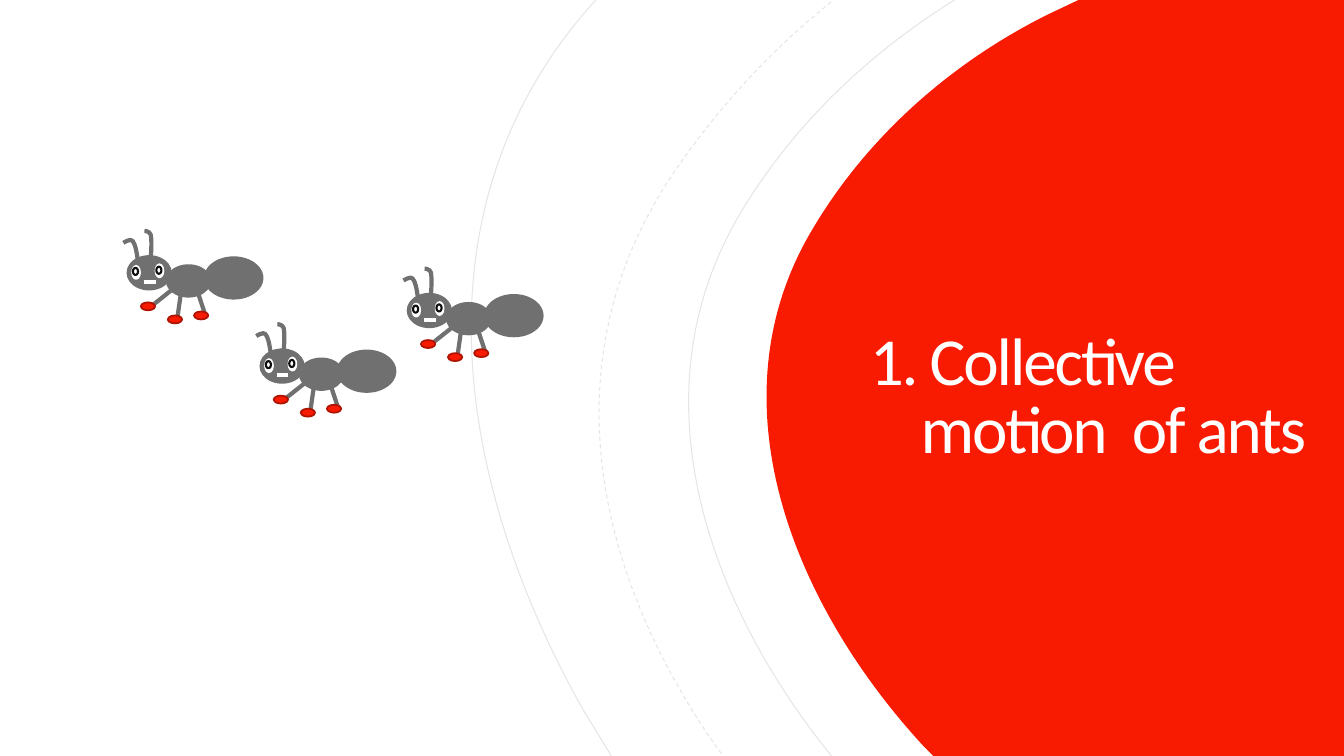
"""Build the section slide on the collective motion of ants."""
import lxml.etree
import pptx
import pptx.dml.color
import pptx.enum.dml
import pptx.enum.shapes
import pptx.enum.text
import pptx.oxml.ns
import pptx.util

Cm = pptx.util.Cm
Pt = pptx.util.Pt
qn = pptx.oxml.ns.qn

COLOURS = {"red": "F81B02", "dark_red": "AF1301", "grey": "707070",
           "black": "000000", "pupil": "0D0D0D", "white": "FFFFFF"}
SLIDE_SIZE = (33.87, 19.05)
TITLE_LINES = ("1. Collective", "motion  of ants")
TITLE_BOX = {"left": Cm(20.9), "top": Cm(3.68), "width": Cm(13.84), "height": Cm(12.75)}
TITLE_FRAME = {
    "word_wrap": True,
    "auto_size": pptx.enum.text.MSO_AUTO_SIZE.NONE,
    "vertical_anchor": pptx.enum.text.MSO_ANCHOR.MIDDLE,
    "margin_left": Cm(0.64), "margin_right": Cm(0.64),
    "margin_top": Cm(0.64), "margin_bottom": Cm(0.64),
}
TITLE_PARAGRAPH = {"alignment": pptx.enum.text.PP_ALIGN.LEFT, "line_spacing": 0.85}
TITLE_FONT = {"name": "Calibri", "size": Pt(48), "bold": False}
TITLE_INDENT = {"marL": Cm(1.66), "indent": Cm(-1.28)}
LETTER_SPACING = "-150"

FAINT = {"line": "black", "width": 0.75, "alpha": 10}
SWEEPS = [
    {"edges": (15.06, -0.05, 33.86, 19.1, 15.44),
     "curve": [(14.71, 17.91), (11.68, 12.55), (10.46, 6.05), (14.2, 0.99),
               (14.45, 0.66), (14.71, 0.33), (14.99, 0.03)],
     "look": FAINT},
    {"edges": (24.1, -0.03, 33.83, 19.08, 20.98),
     "curve": [(20.85, 18.92), (17.7, 14.96), (16.05, 9.83), (18.62, 5.44),
               (19.91, 3.25), (21.77, 1.45), (23.9, 0.1)],
     "look": FAINT},
    {"edges": (21.03, -0.02, 33.88, 19.07, 18.24),
     "curve": [(17.88, 18.57), (14.94, 14.22), (13.82, 8.89), (17.07, 4.22),
               (18.01, 2.87), (19.1, 1.63), (20.37, 0.53)],
     "look": {**FAINT, "dash": True}},
    {"edges": (27.18, 0, 33.87, 19.05, 23.52),
     "curve": [(23.29, 18.82), (19.94, 15.19), (17.93, 10.08), (20.45, 5.82),
               (21.84, 3.45), (23.98, 1.57), (26.42, 0.36)],
     "look": {"fill": "red"}},
]

ANT_ORIGINS = [(3.11, 5.82), (6.46, 8.17), (10.17, 6.77)]
LIMB = {"line": "grey", "width": 3}
BODY = {"fill": "grey"}
FOOT = {"fill": "red", "line": "dark_red", "width": 1.25}
EYE = {"fill": "white", "line": "white", "width": 1.25}
PUPIL = {"fill": "white", "line": "pupil", "width": 1.5}
MOUTH = {"line": "white", "width": 3}
BODY_PARTS = [(1.07, 0.84, 1.14, 0.84), (0.08, 0.61, 1.14, 0.89), (2.03, 0.64, 1.5, 1.09)]
LEGS = [(1.24, 1.47, 0.66, 1.93), (1.45, 1.57, 1.35, 2.26), (1.85, 1.47, 2.08, 2.16)]
ANTENNAE = [
    [(0.36, 0.71), (0.33, 0.51), (0.3, 0.33), (0.23, 0.25), (0.18, 0.18), (0, 0.3), (0, 0.3)],
    [(0.69, 0.64), (0.71, 0.43), (0.71, 0.2), (0.69, 0.1), (0.66, 0), (0.53, 0), (0.53, 0)],
]
FEET = [(0.44, 1.8), (1.12, 2.13), (1.78, 2.03)]
FOOT_SIZE = (0.36, 0.2)
EYES = [((0.81, 0.84), (0.83, 0.9)), ((0.22, 0.88), (0.24, 0.93))]
EYE_SIZE = (0.2, 0.33)
PUPIL_SIZE = (0.13, 0.18)
MOUTH_ENDS = [(0.51, 1.29), (0.81, 1.29)]


def colour(name):
    return pptx.dml.color.RGBColor.from_string(COLOURS[name])


def style_line(line, look):
    if "line" not in look:
        line.fill.background()
        return
    line.color.rgb = colour(look["line"])
    line.width = Pt(look["width"])
    if look.get("dash"):
        line.dash_style = pptx.enum.dml.MSO_LINE.DASH
    if "alpha" in look:
        tint = line._get_or_add_ln().find(".//" + qn("a:srgbClr"))
        lxml.etree.SubElement(tint, qn("a:alpha"), val=str(look["alpha"] * 1000))


def style_shape(shape, look):
    shape.shadow.inherit = False
    if "fill" in look:
        shape.fill.solid()
        shape.fill.fore_color.rgb = colour(look["fill"])
    else:
        shape.fill.background()
    style_line(shape.line, look)


def trace_curve(points, steps=40):
    """Return points along a chain of cubic Bezier curves."""
    traced = [points[0]]
    for first in range(0, len(points) - 1, 3):
        corners = points[first:first + 4]
        for step in range(1, steps + 1):
            t = step / steps
            weights = ((1 - t) ** 3, 3 * t * (1 - t) ** 2, 3 * t * t * (1 - t), t ** 3)
            traced.append(tuple(sum(w * corner[axis] for w, corner in zip(weights, corners))
                                for axis in (0, 1)))
    return traced


def add_outline(shapes, corners, curve, look, closed):
    """Draw straight corners followed by cubic curves, sized to the drawn extent."""
    extent = [(Cm(x), Cm(y)) for x, y in corners + trace_curve(curve)]
    builder = shapes.build_freeform(*extent[0])
    builder.add_line_segments(extent[1:], close=closed)
    shape = builder.convert_to_shape()
    geometry = shape.element.find(".//" + qn("a:path"))
    for child in list(geometry):
        geometry.remove(child)

    straight = corners + curve[:1]
    segments = [("a:moveTo", straight[:1])]
    segments += [("a:lnTo", [point]) for point in straight[1:]]
    segments += [("a:cubicBezTo", curve[first:first + 3]) for first in range(1, len(curve), 3)]
    segments.append(("a:close", []) if closed else ("a:lnTo", curve[-1:]))
    for tag, points in segments:
        segment = lxml.etree.SubElement(geometry, qn(tag))
        for x, y in points:
            lxml.etree.SubElement(segment, qn("a:pt"), x=str(Cm(x) - shape.left),
                                  y=str(Cm(y) - shape.top))
    style_shape(shape, look)


def add_sweep(shapes, sweep):
    top_x, top, right, bottom, foot_x = sweep["edges"]
    border = [(top_x, top), (right, top), (right, bottom), (foot_x, bottom)]
    add_outline(shapes, border, sweep["curve"], sweep["look"], True)


def add_ant(slide, origin):
    shapes = slide.shapes.add_group_shape().shapes
    left, top = origin

    def place(points):
        return [(left + x, top + y) for x, y in points]

    def add_ellipse(x, y, width, height, look):
        shape = shapes.add_shape(pptx.enum.shapes.MSO_SHAPE.OVAL, Cm(left + x), Cm(top + y),
                                 Cm(width), Cm(height))
        style_shape(shape, look)

    for part in BODY_PARTS:
        add_ellipse(*part, BODY)
    for x1, y1, x2, y2 in LEGS:
        leg = shapes.add_connector(pptx.enum.shapes.MSO_CONNECTOR.STRAIGHT,
                                   Cm(left + x1), Cm(top + y1), Cm(left + x2), Cm(top + y2))
        style_line(leg.line, LIMB)
        lxml.etree.SubElement(leg.element.spPr, qn("a:effectLst"))
    for antenna in ANTENNAE:
        add_outline(shapes, [], place(antenna), LIMB, False)
    for foot in FEET:
        add_ellipse(*foot, *FOOT_SIZE, FOOT)
    for eye, pupil in EYES:
        add_ellipse(*eye, *EYE_SIZE, EYE)
        add_ellipse(*pupil, *PUPIL_SIZE, PUPIL)
    mouth_start, mouth_end = place(MOUTH_ENDS)
    add_outline(shapes, [mouth_start], [mouth_end], MOUTH, False)


def set_title(title):
    title.element.getparent().append(title.element)
    frame = title.text_frame
    paragraph = frame.paragraphs[0]
    for target, values in ((title, TITLE_BOX), (frame, TITLE_FRAME), (paragraph, TITLE_PARAGRAPH)):
        for name, value in values.items():
            setattr(target, name, value)
    for name, value in TITLE_INDENT.items():
        paragraph._p.get_or_add_pPr().set(name, str(int(value)))
    for number, line in enumerate(TITLE_LINES):
        if number:
            paragraph.add_line_break()
        run = paragraph.add_run()
        run.text = line
        for name, value in TITLE_FONT.items():
            setattr(run.font, name, value)
        run.font.color.rgb = colour("white")
        run._r.get_or_add_rPr().set("spc", LETTER_SPACING)


def main():
    presentation = pptx.Presentation()
    presentation.slide_width, presentation.slide_height = map(Cm, SLIDE_SIZE)
    slide = presentation.slides.add_slide(presentation.slide_layouts[5])
    for sweep in SWEEPS:
        add_sweep(slide.shapes, sweep)
    set_title(slide.shapes.title)
    for origin in ANT_ORIGINS:
        add_ant(slide, origin)
    presentation.save("out.pptx")


if __name__ == "__main__":
    main()
